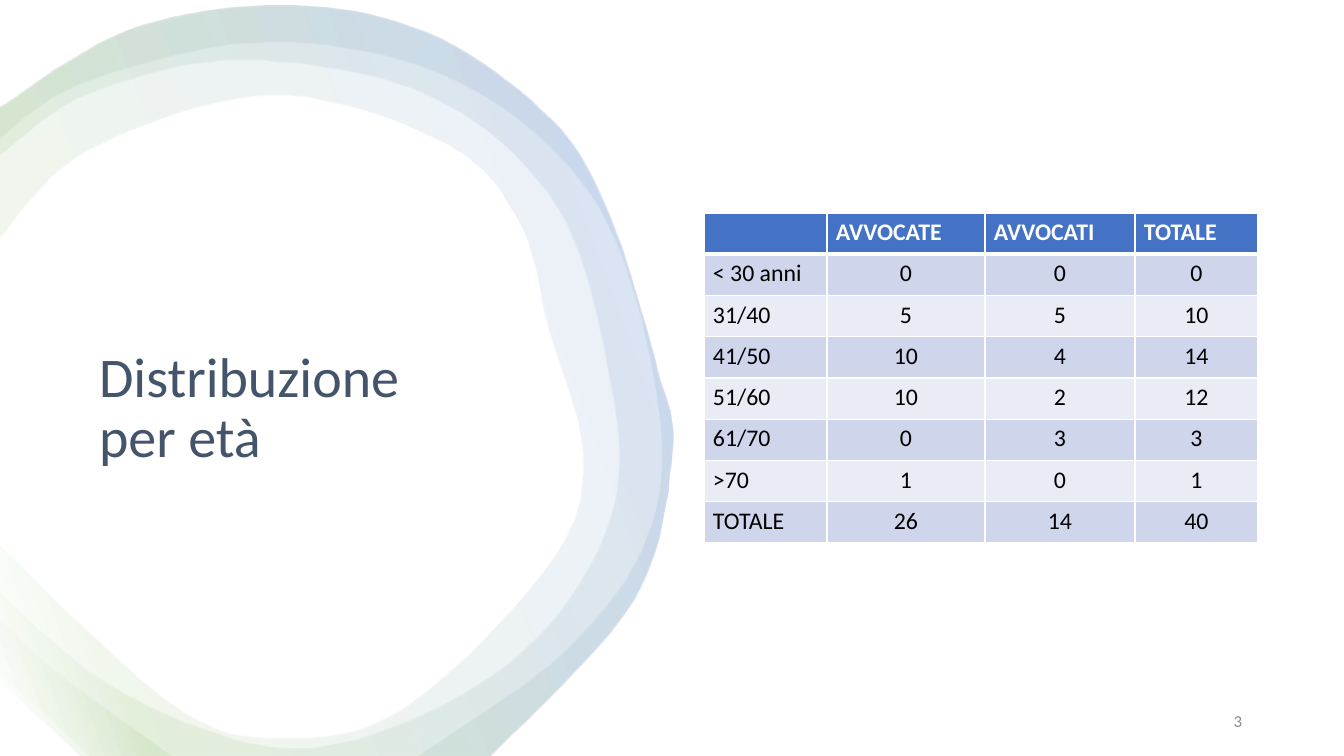
from dataclasses import dataclass
from itertools import chain

from pptx import Presentation
from pptx.dml.color import RGBColor
from pptx.enum.text import MSO_ANCHOR, PP_ALIGN
from pptx.oxml import parse_xml
from pptx.oxml.ns import nsdecls
from pptx.util import Pt

# Content
TITLE = "Distribuzione per età"
NUMBER = "3"
ROWS = [
    ("", "AVVOCATE", "AVVOCATI", "TOTALE"),
    ("< 30 anni", "0", "0", "0"),
    ("31/40", "5", "5", "10"),
    ("41/50", "10", "4", "14"),
    ("51/60", "10", "2", "12"),
    ("61/70", "0", "3", "3"),
    (">70", "1", "0", "1"),
    ("TOTALE", "26", "14", "40"),
]

# Ring in px: the bands share one rim, and each has its own inner edge
RIM = [(0, 108), (128, 31), (280, 6), (426, 33), (551, 120), (610, 218),
       (657, 370), (672, 452), (633, 601), (490, 756)]
WIDE = [(0, 546), (172, 704), (280, 738), (405, 707), (549, 564), (583, 459),
        (549, 332), (519, 223), (443, 143), (271, 96), (88, 151), (0, 238)]
MID = [(0, 593), (118, 690), (282, 748), (427, 712), (542, 632), (612, 512),
       (610, 383), (557, 208), (430, 97), (243, 61), (88, 95), (0, 156)]
THIN = [(417, 756), (568, 648), (651, 525), (653, 378), (592, 198),
        (452, 80), (271, 43), (90, 81), (0, 138)]
WEDGE = [[(0, 673), (90, 756)], [(172, 756), (54, 670), (0, 620)]]
CUT = [(80, 756), (0, 680)]
BANDS = [[[RIM, CUT, MID]], [[RIM, CUT, WIDE]], [[RIM, THIN], WEDGE]]

# Layout in px: left, top, width, height
PAGE = (1344, 756)
HEAD_BOX = (89, 344, 403, 197)
GRID_BOX = (704, 213, 554, 330)
NUM_BOX = (950, 701, 302, 40)
COLS = (123, 158, 150, 123)
INSET = (9, 5)
STEPS = 10


@dataclass(frozen=True)
class Theme:
    font: str = "Calibri"
    title: str = "44546A"
    head: str = "4472C4"
    odd: str = "CFD5EA"
    even: str = "E9EBF5"
    white: str = "FFFFFF"
    black: str = "000000"
    grey: str = "8C8C8C"
    big: int = 40
    cell: int = 17
    small: int = 12
    stops: tuple = ((2, "FFFFFF"), (16, "70AD47"), (85, "4472C4"), (100, "FFFFFF"))
    alpha: int = 10
    angle: int = 340


THEME = Theme()


def px(n):
    return round(n * 914400 / 100.8)


def place(shape, box):
    shape.left, shape.top, shape.width, shape.height = map(px, box)


def style(para, size, color, bold=False, align=PP_ALIGN.LEFT):
    para.alignment = align
    for run in para.runs:
        font = run.font
        font.name, font.size, font.bold = THEME.font, Pt(size), bold
        font.color.rgb = RGBColor.from_string(color)


def smooth(run):
    """Sample a Catmull-Rom curve through the points of a run."""
    ends = [run[0], *run, run[-1]]
    out = [run[0]]
    for a, b, c, d in zip(ends, ends[1:], ends[2:], ends[3:]):
        for step in range(1, STEPS + 1):
            t = step / STEPS
            out.append(tuple(
                (2 * q + (r - p) * t + (2 * p - 5 * q + 4 * r - s) * t ** 2
                 + (3 * q - p - 3 * r + s) * t ** 3) / 2
                for p, q, r, s in zip(a, b, c, d)))
    return out


def add_band(shapes, band):
    pen = None
    for line in band:
        first, *rest = chain.from_iterable(map(smooth, line))
        if pen is None:
            pen = shapes.build_freeform(*first, scale=px(100) / 100)
        else:
            pen.move_to(*first)
        pen.add_line_segments(rest, close=True)
    shape = pen.convert_to_shape()
    shape.shadow.inherit = False
    shape.line.fill.background()
    stops = "".join(
        f'<a:gs pos="{pos * 1000}"><a:srgbClr val="{color}">'
        f'<a:alpha val="{THEME.alpha * 1000}"/></a:srgbClr></a:gs>'
        for pos, color in THEME.stops)
    shape.fill.gradient()
    grad = shape.fill._xPr.gradFill
    grad.getparent().replace(grad, parse_xml(
        f'<a:gradFill {nsdecls("a")} rotWithShape="1"><a:gsLst>{stops}</a:gsLst>'
        f'<a:lin ang="{THEME.angle * 60000}" scaled="0"/></a:gradFill>'))


def set_edges(cell, widths):
    props = cell._tc.get_or_add_tcPr()
    for side, width in zip("LRTB", widths):
        props.append(parse_xml(
            f'<a:ln{side} {nsdecls("a")} w="{Pt(width)}"><a:solidFill>'
            f'<a:srgbClr val="{THEME.white}"/></a:solidFill></a:ln{side}>'))


def add_grid(shapes):
    grid = shapes.add_table(len(ROWS), len(COLS), *map(px, GRID_BOX)).table
    for col, width in zip(grid.columns, COLS):
        col.width = px(width)
    for i, row in enumerate(ROWS):
        grid.rows[i].height = px(GRID_BOX[3] / len(ROWS))
        fill = THEME.head if i == 0 else THEME.odd if i % 2 else THEME.even
        for j, text in enumerate(row):
            cell = grid.cell(i, j)
            set_edges(cell, (1, 1, 3 if i == 1 else 1, 3 if i == 0 else 1))
            cell.fill.solid()
            cell.fill.fore_color.rgb = RGBColor.from_string(fill)
            cell.margin_left = cell.margin_right = px(INSET[0])
            cell.margin_top = cell.margin_bottom = px(INSET[1])
            cell.text_frame.text = text
            style(cell.text_frame.paragraphs[0], THEME.cell,
                  THEME.black if i else THEME.white, i == 0,
                  PP_ALIGN.CENTER if i and j else PP_ALIGN.LEFT)


def main():
    deck = Presentation()
    deck.slide_width, deck.slide_height = map(px, PAGE)
    slide = deck.slides.add_slide(deck.slide_layouts[5])
    shapes = slide.shapes

    # Ring
    for band in BANDS:
        add_band(shapes, band)

    # Title, in front of the ring
    title = shapes.title
    shapes._spTree.append(title._element)
    place(title, HEAD_BOX)
    title.text_frame.text = TITLE
    title.text_frame.vertical_anchor = MSO_ANCHOR.TOP
    title.text_frame.paragraphs[0].line_spacing = 0.9
    style(title.text_frame.paragraphs[0], THEME.big, THEME.title)

    # Table
    add_grid(shapes)

    # Slide number
    frame = shapes.add_textbox(*map(px, NUM_BOX)).text_frame
    frame.word_wrap = True
    frame.vertical_anchor = MSO_ANCHOR.MIDDLE
    frame.text = NUMBER
    style(frame.paragraphs[0], THEME.small, THEME.grey, align=PP_ALIGN.RIGHT)

    deck.save("out.pptx")


if __name__ == "__main__":
    main()
